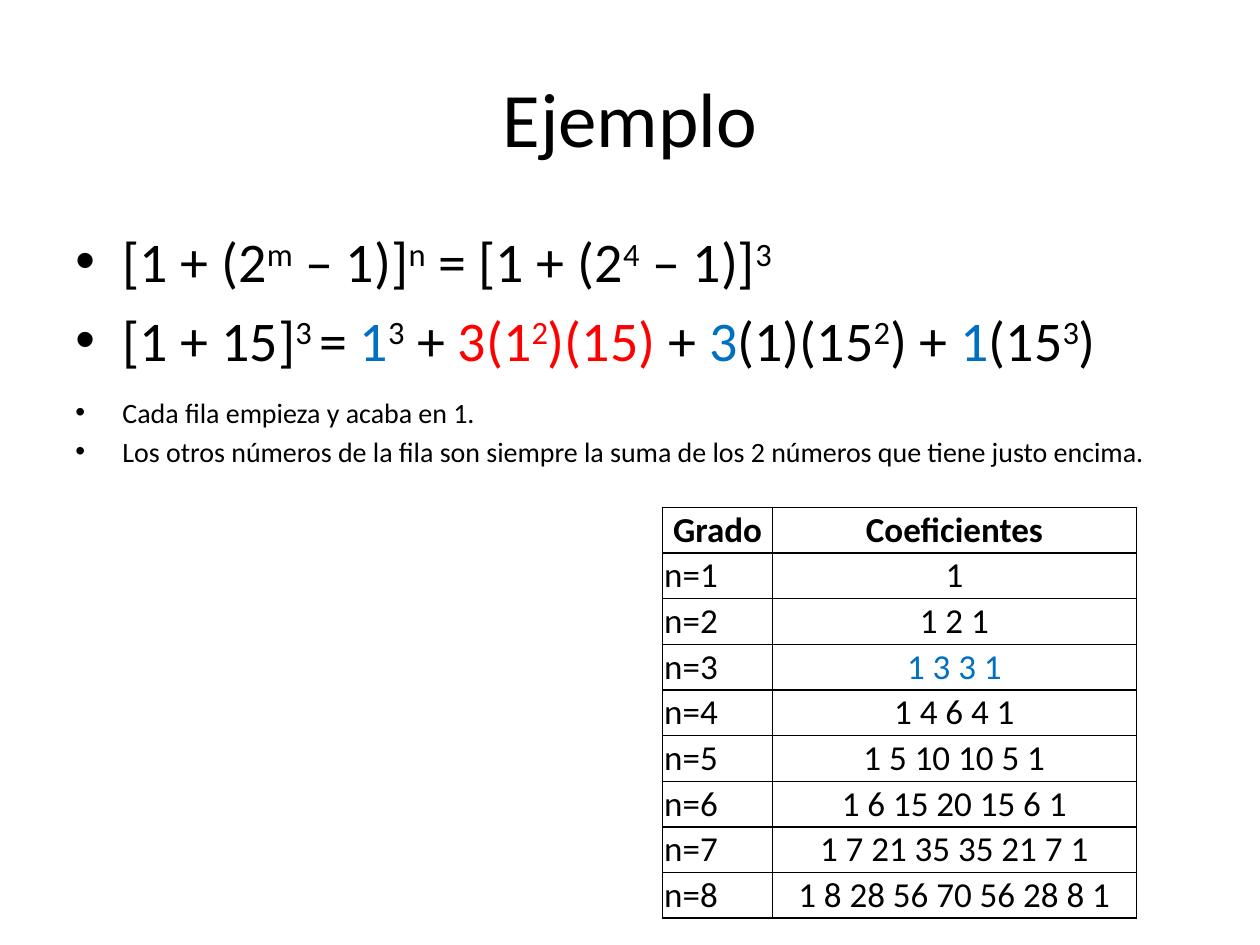
from typing import NamedTuple

from lxml import etree
from pptx import Presentation
from pptx.dml.color import RGBColor
from pptx.enum.text import MSO_ANCHOR, PP_ALIGN
from pptx.oxml.ns import qn
from pptx.util import Cm, Pt

BLACK = RGBColor(0x00, 0x00, 0x00)
BLUE = RGBColor(0x00, 0x70, 0xC0)
RED = RGBColor(0xFF, 0x00, 0x00)
FONT = "Calibri"
LEFT, CENTER = PP_ALIGN.LEFT, PP_ALIGN.CENTER
TOP, MIDDLE = MSO_ANCHOR.TOP, MSO_ANCHOR.MIDDLE
ROW_HEIGHT = Cm(0.92)
CELL_MARGIN = Cm(0.03)
BULLET_INDENT = Cm(0.95)


class Span(NamedTuple):
    text: str
    color: RGBColor = BLACK
    raised: bool = False


class Bullet(NamedTuple):
    spans: list[Span]
    size: float
    space_before: float


def power(text: str, color: RGBColor = BLACK) -> Span:
    return Span(text, color, raised=True)


BULLETS = [
    Bullet([Span("[1 + (2"), power("m"), Span(" – 1)]"), power("n"),
            Span(" = [1 + (2"), power("4"), Span(" – 1)]"), power("3")], 32, 6.4),
    Bullet([Span("[1 + 15]"), power("3 "), Span("= "), Span("1", BLUE), power("3"),
            Span(" + "), Span("3(1", RED), power("2", RED), Span(")(15) ", RED),
            Span("+ "), Span("3", BLUE), Span("(1)(15"), power("2"), Span(") + "),
            Span("1", BLUE), Span("(15"), power("3"), Span(")")], 32, 6.4),
    Bullet([Span("Cada fila empieza y acaba en 1.")], 16, 13),
    Bullet([Span("Los otros números de la fila son siempre la suma de los "
                 "2 números que tiene justo encima.")], 16, 3.2),
]

COEFFICIENTS = [
    "1", "1 2 1", "1 3 3 1", "1 4 6 4 1", "1 5 10 10 5 1", "1 6 15 20 15 6 1",
    "1 7 21 35 35 21 7 1", "1 8 28 56 70 56 28 8 1",
]
EXAMPLE_DEGREE = 3


def add_span(para, span: Span, size: float, bold: bool = False) -> None:
    run = para.add_run()
    run.text = span.text
    run.font.name = FONT
    run.font.size = Pt(size)
    run.font.bold = bold
    run.font.color.rgb = span.color
    if span.raised:
        run._r.get_or_add_rPr().set("baseline", "30000")


def add_box(page, left: Cm, top: Cm, width: Cm, height: Cm, anchor):
    frame = page.shapes.add_textbox(left, top, width, height).text_frame
    frame.word_wrap = True
    frame.vertical_anchor = anchor
    return frame


def add_bullet(para, bullet: Bullet) -> None:
    para.space_before = Pt(bullet.space_before)
    properties = para._p.get_or_add_pPr()
    properties.set("marL", str(BULLET_INDENT))
    properties.set("indent", str(-BULLET_INDENT))
    etree.SubElement(properties, qn("a:buFont")).set("typeface", "Arial")
    etree.SubElement(properties, qn("a:buChar")).set("char", "•")
    for span in bullet.spans:
        add_span(para, span, bullet.size)


def draw_borders(cell) -> None:
    properties = cell._tc.get_or_add_tcPr()
    for index, side in enumerate(("a:lnL", "a:lnR", "a:lnT", "a:lnB")):
        line = etree.Element(qn(side), w=str(Pt(1)))
        fill = etree.SubElement(line, qn("a:solidFill"))
        etree.SubElement(fill, qn("a:srgbClr")).set("val", str(BLACK))
        properties.insert(index, line)


def fill_cell(cell, span: Span, align, bold: bool) -> None:
    cell.margin_left = cell.margin_right = CELL_MARGIN
    cell.margin_top = cell.margin_bottom = CELL_MARGIN
    cell.vertical_anchor = MIDDLE
    cell.fill.background()
    draw_borders(cell)
    para = cell.text_frame.paragraphs[0]
    para.alignment = align
    add_span(para, span, 20, bold)


def add_coefficient_table(page) -> None:
    row_count = len(COEFFICIENTS) + 1
    table = page.shapes.add_table(row_count, 2, Cm(13.36), Cm(10.23), Cm(9.55),
                                  ROW_HEIGHT * row_count).table
    table.horz_banding = False
    table.columns[0].width = Cm(2.21)
    table.columns[1].width = Cm(7.34)
    for row in table.rows:
        row.height = ROW_HEIGHT
    fill_cell(table.cell(0, 0), Span("Grado"), CENTER, True)
    fill_cell(table.cell(0, 1), Span("Coeficientes"), CENTER, True)
    for degree, values in enumerate(COEFFICIENTS, start=1):
        color = BLUE if degree == EXAMPLE_DEGREE else BLACK
        fill_cell(table.cell(degree, 0), Span(f"n={degree}"), LEFT, False)
        fill_cell(table.cell(degree, 1), Span(values, color), CENTER, False)


def main() -> None:
    deck = Presentation()
    deck.slide_width, deck.slide_height = Cm(25.4), Cm(19.05)
    page = deck.slides.add_slide(deck.slide_layouts[6])

    title = add_box(page, Cm(1.27), Cm(0.76), Cm(22.86), Cm(3.18), MIDDLE).paragraphs[0]
    title.alignment = CENTER
    add_span(title, Span("Ejemplo"), 44)

    body = add_box(page, Cm(1.27), Cm(4.45), Cm(22.86), Cm(12.57), TOP)
    for index, bullet in enumerate(BULLETS):
        add_bullet(body.add_paragraph() if index else body.paragraphs[0], bullet)

    add_coefficient_table(page)
    deck.save("out.pptx")


if __name__ == "__main__":
    main()
